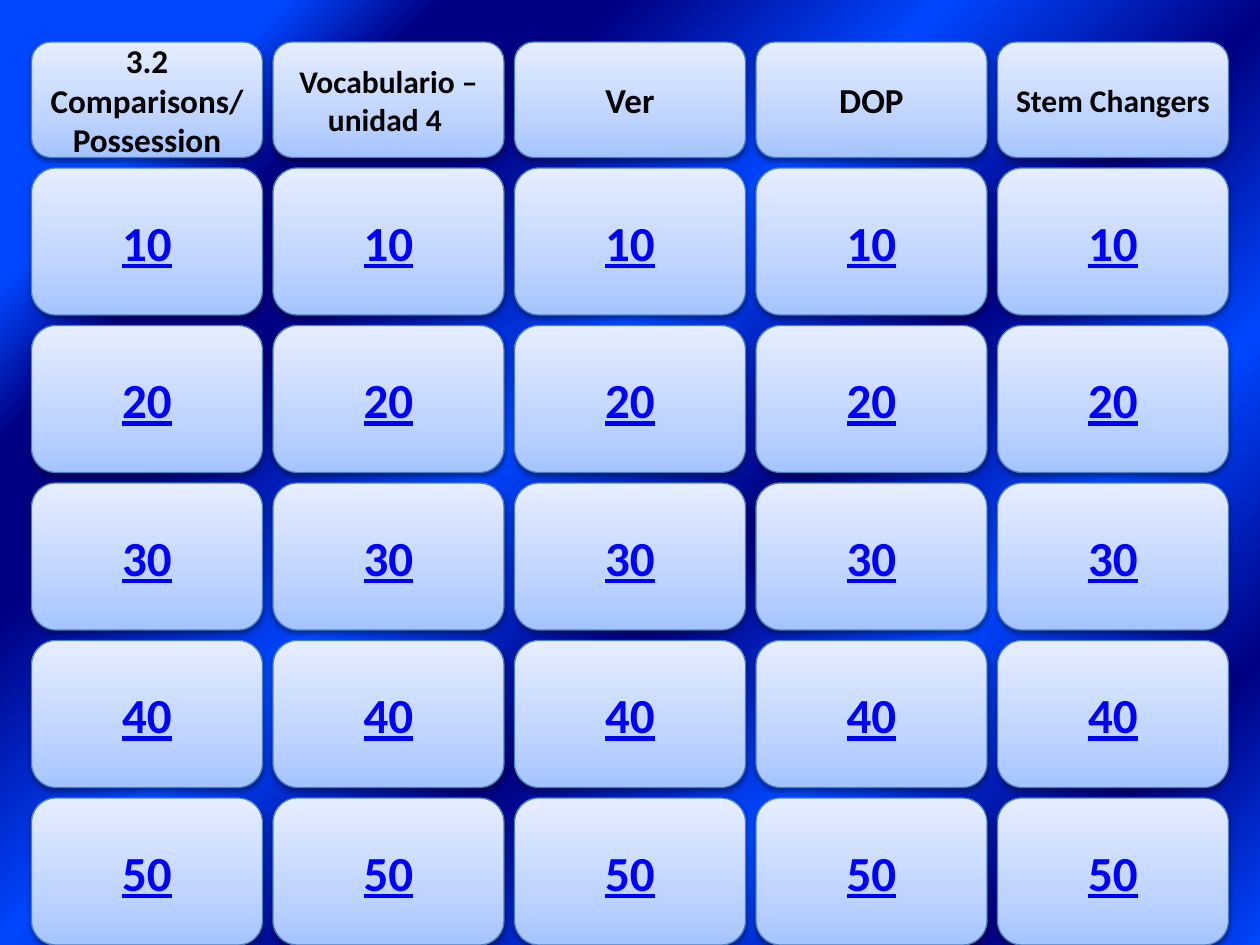
from dataclasses import dataclass
from pptx import Presentation
from pptx.dml.color import RGBColor as Rgb
from pptx.enum.shapes import MSO_SHAPE as Kind
from pptx.enum.text import MSO_ANCHOR as Anchor, PP_ALIGN as Align
from pptx.oxml import parse_xml
from pptx.oxml.ns import nsdecls, qn
from pptx.util import Emu, Pt

SCALE = 9525
LEFT, WIDE, GAP = 24, 176, 8
HEAD_TOP, HEAD_TALL = 32, 88
CELL_TOP, CELL_TALL = 128, 112


@dataclass(frozen=True)
class Theme:
    """Hold the colours, font and type sizes of the board."""
    font: str = "Calibri"
    ink: str = "000000"
    link: str = "0000FF"
    edge: str = "4B7EBC"
    shade: str = "000000"
    tile: tuple = ((0, "A4C4FF"), (35, "BFD4FF"), (100, "E6EEFF"))
    back: tuple = ((0, "0047FF"), (13, "0047FF"), (20, "000082"),
                   (28, "000082"), (43, "0047FF"), (58, "000082"),
                   (72, "0047FF"), (87, "000082"), (100, "0047FF"))
    small: int = 18
    mid: int = 19
    large: int = 20
    score: int = 28


def px(size):
    """Turn px into EMU."""
    return Emu(size * SCALE)


def blend(fill, root, stops, angle):
    """Give a fill a linear gradient with a counter-clockwise angle."""
    fill.gradient()
    fill.gradient_angle = angle
    group = next(root.iter(qn("a:gsLst")))
    for old in list(group):
        group.remove(old)
    for spot, tone in stops:
        group.append(parse_xml(
            f'<a:gs {nsdecls("a")} pos="{spot * 1000}">'
            f'<a:srgbClr val="{tone}"/></a:gs>'))


def write(frame, text, *, font, size, color, bold=True, under=False):
    """Write centred text into a frame."""
    frame.word_wrap = True
    frame.vertical_anchor = Anchor.MIDDLE
    para = frame.paragraphs[0]
    para.alignment = Align.CENTER
    run = para.add_run()
    run.text = text
    face = run.font
    face.name, face.size, face.bold = font, Pt(size), bold
    face.color.rgb = Rgb.from_string(color)
    if under:
        face.underline = True


class Board:
    """Draw the parts of a quiz board on one slide."""

    def __init__(self, slide, theme):
        """Keep the slide and its theme."""
        self.slide, self.theme = slide, theme

    def back(self):
        """Paint the striped background."""
        blend(self.slide.background.fill, self.slide.element,
              self.theme.back, 315)

    def tile(self, col, top, tall, text, **form):
        """Add one rounded tile with its text."""
        left = LEFT + col * (WIDE + GAP)
        shape = self.slide.shapes.add_shape(
            Kind.ROUNDED_RECTANGLE, px(left), px(top), px(WIDE), px(tall))
        props = shape.element.spPr
        blend(shape.fill, props, self.theme.tile, 90)
        shape.line.color.rgb = Rgb.from_string(self.theme.edge)
        shape.line.width = Pt(0.75)
        shape.shadow.inherit = False
        props.find(qn("a:effectLst")).append(parse_xml(
            f'<a:outerShdw {nsdecls("a")} blurRad="40000" dist="20000" '
            f'dir="5400000" rotWithShape="0"><a:srgbClr val="{self.theme.shade}">'
            '<a:alpha val="38000"/></a:srgbClr></a:outerShdw>'))
        write(shape.text_frame, text, font=self.theme.font, **form)

    def head(self, col, text, size):
        """Add the topic tile of a column."""
        self.tile(col, HEAD_TOP, HEAD_TALL, text,
                  size=size, color=self.theme.ink)

    def cell(self, col, row, text):
        """Add a score tile."""
        self.tile(col, CELL_TOP + row * (CELL_TALL + GAP), CELL_TALL, text,
                  size=self.theme.score, color=self.theme.link, under=True)


def main():
    """Build the board and save it."""
    deck = Presentation()
    deck.slide_width, deck.slide_height = px(960), px(720)
    theme = Theme()
    board = Board(deck.slides.add_slide(deck.slide_layouts[6]), theme)
    board.back()
    topics = (("3.2 Comparisons/Possession", theme.mid),
              ("Vocabulario – unidad 4 ", theme.small),
              ("Ver", theme.large),
              ("DOP", theme.large),
              ("Stem Changers", theme.small))
    for col, (topic, size) in enumerate(topics):
        board.head(col, topic, size)
        for row in range(5):
            board.cell(col, row, str(10 * (row + 1)))
    deck.save("out.pptx")


if __name__ == "__main__":
    main()
